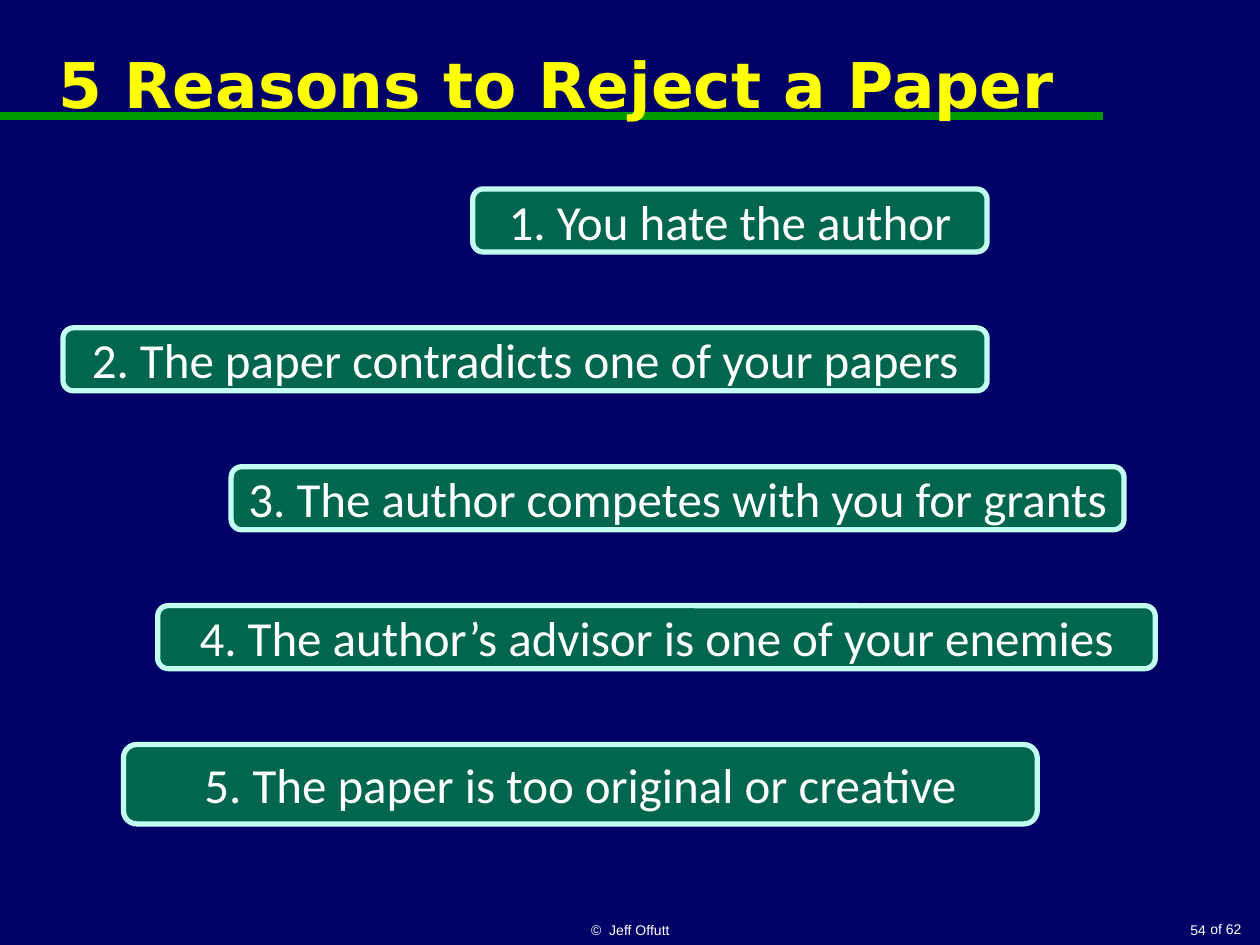
import pptx
import pptx.dml.color
import pptx.enum.shapes
import pptx.enum.text
import pptx.oxml.ns
import pptx.util
from pptx.util import Cm
import lxml.etree

hues = {
    "back": "000066",
    "rule": "009900",
    "title": "FFFF00",
    "text": "FFFFFF",
    "box": "00664D",
    "edge": "C2FFF0",
}
align = pptx.enum.text.PP_ALIGN
anchor = pptx.enum.text.MSO_ANCHOR


def paint(part, name):
    part.rgb = pptx.dml.color.RGBColor.from_string(hues[name])


def write(shape, text, font, size, hue, side, place, wrap=True, bold=False):
    frame = shape.text_frame
    frame.word_wrap = wrap
    frame.vertical_anchor = place
    para = frame.paragraphs[0]
    para.alignment = side
    run = para.add_run()
    run.text = text
    run.font.name = font
    run.font.size = pptx.util.Pt(size)
    run.font.bold = bold
    paint(run.font.color, hue)


deck = pptx.Presentation()
deck.slide_width = Cm(25.4)
deck.slide_height = Cm(19.05)
slide = deck.slides.add_slide(deck.slide_layouts[6])
slide.background.fill.solid()
paint(slide.background.fill.fore_color, "back")

rule = slide.shapes.add_connector(
    pptx.enum.shapes.MSO_CONNECTOR.STRAIGHT, Cm(0), Cm(2.33), Cm(22.23), Cm(2.33)
)
paint(rule.line.color, "rule")
rule.line.width = pptx.util.Pt(4.5)
lxml.etree.SubElement(rule._element.spPr, pptx.oxml.ns.qn("a:effectLst"))

title = slide.shapes.add_textbox(Cm(0.2), Cm(0), Cm(22.03), Cm(3.38))
write(title, "5 Reasons to Reject a Paper", "DejaVu Sans", 36, "title",
      align.CENTER, anchor.MIDDLE, bold=True)

notes = [
    ("©  Jeff Offutt", 8.69, 18.2, 8.04, 0.85, align.CENTER, anchor.BOTTOM, True),
    ("54", 20.11, 18.2, 4.45, 0.85, align.RIGHT, anchor.BOTTOM, True),
    ("of 62", 24.13, 18.44, 1.15, 0.6, align.RIGHT, anchor.TOP, False),
]
for text, left, top, width, height, side, place, wrap in notes:
    note = slide.shapes.add_textbox(Cm(left), Cm(top), Cm(width), Cm(height))
    write(note, text, "Arial", 8, "text", side, place, wrap)

reasons = [
    ("1. You hate the author", 9.53, 10.37, 1.27),
    ("2. The paper contradicts one of your papers", 1.27, 18.63, 1.27),
    ("3. The author competes with you for grants", 4.66, 18, 1.27),
    ("4. The author’s advisor is one of your enemies", 3.18, 20.11, 1.27),
    ("5. The paper is too original or creative", 2.49, 18.42, 1.6),
]
for row, (text, left, width, height) in enumerate(reasons):
    box = slide.shapes.add_shape(
        pptx.enum.shapes.MSO_SHAPE.ROUNDED_RECTANGLE,
        Cm(left), Cm(3.81 + 2.8 * row), Cm(width), Cm(height),
    )
    box.shadow.inherit = False
    box.fill.solid()
    paint(box.fill.fore_color, "box")
    paint(box.line.color, "edge")
    box.line.width = pptx.util.Pt(3)
    write(box, text, "Calibri", 28, "text", align.CENTER, anchor.MIDDLE)

deck.save("out.pptx")
